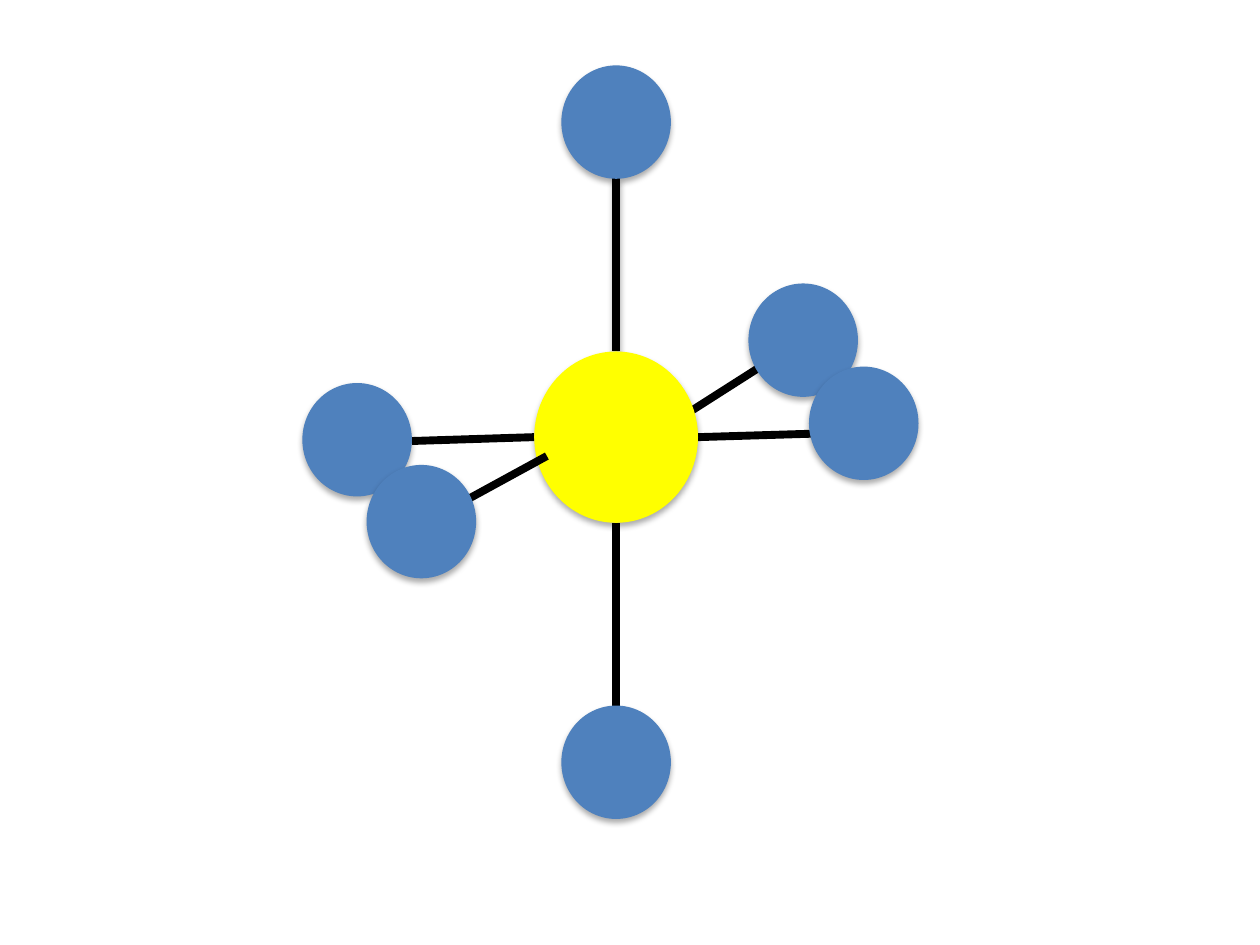
import pptx
import pptx.util
import pptx.dml.color
import pptx.enum.shapes
import pptx.oxml
import pptx.oxml.ns

Pt = pptx.util.Pt
RGB = pptx.dml.color.RGBColor.from_string
kinds = pptx.enum.shapes

theme = {
    "outer": "4F81BD",
    "core": "FFFF00",
    "bond": "000000",
    "shade": "000000",
    "width": 4.5,
}

deck = pptx.Presentation()
deck.slide_width, deck.slide_height = Pt(720), Pt(540)
slide = deck.slides.add_slide(deck.slide_layouts[6])
model = slide.shapes.add_group_shape().shapes


def effect(shape, shadow):
    """Give the shape a soft shadow below it, or an empty effect list."""
    inner = ""
    if shadow:
        inner = (
            f'<a:outerShdw blurRad="{Pt(3.5)}" dist="{Pt(2.2)}" dir="5400000" rotWithShape="0">'
            f'<a:srgbClr val="{theme["shade"]}"><a:alpha val="32000"/></a:srgbClr>'
            "</a:outerShdw>"
        )
    space = pptx.oxml.ns.nsdecls("a")
    xml = f"<a:effectLst {space}>{inner}</a:effectLst>"
    shape._element.spPr.append(pptx.oxml.parse_xml(xml))


# Centres and sizes, from back to front
core = (352.1, 249.8)
small, large = (62.6, 64.8), (93.6, 97.9)
top = core[1] - large[1] / 2
base = core[1] + large[1] / 2
left = core[0] - large[0] / 2
right = core[0] + large[0] / 2

parts = [
    ("bond", (core[0], 101.5), (core[0], top), True),
    ("bond", (left, core[1]), (235.4, 252), False),
    ("bond", (core[0], base), (core[0], 403.2), False),
    ("bond", (468.7, 247.7), (right, core[1]), False),
    ("bond", (391.7, 236.9), (439.2, 206.6), False),
    ("outer", (core[0], 435.6), small, True),
    ("outer", (204.1, 251.3), small, True),
    ("outer", (core[0], 69.8), small, True),
    ("outer", (459, 194.4), small, True),
    ("core", core, large, True),
    ("bond", (312.5, 260.6), (266.4, 285.8), False),
    ("outer", (493.6, 241.9), small, True),
    ("outer", (240.8, 298.1), small, True),
]

for kind, (x, y), (a, b), shadow in parts:
    if kind == "bond":
        item = model.add_connector(
            kinds.MSO_CONNECTOR.STRAIGHT, Pt(x), Pt(y), Pt(a), Pt(b))
        item.line.color.rgb = RGB(theme["bond"])
        item.line.width = Pt(theme["width"])
    else:
        item = model.add_shape(
            kinds.MSO_SHAPE.OVAL, Pt(x - a / 2), Pt(y - b / 2), Pt(a), Pt(b))
        item.fill.solid()
        item.fill.fore_color.rgb = RGB(theme[kind])
        item.line.fill.background()
    effect(item, shadow)

deck.save("out.pptx")
